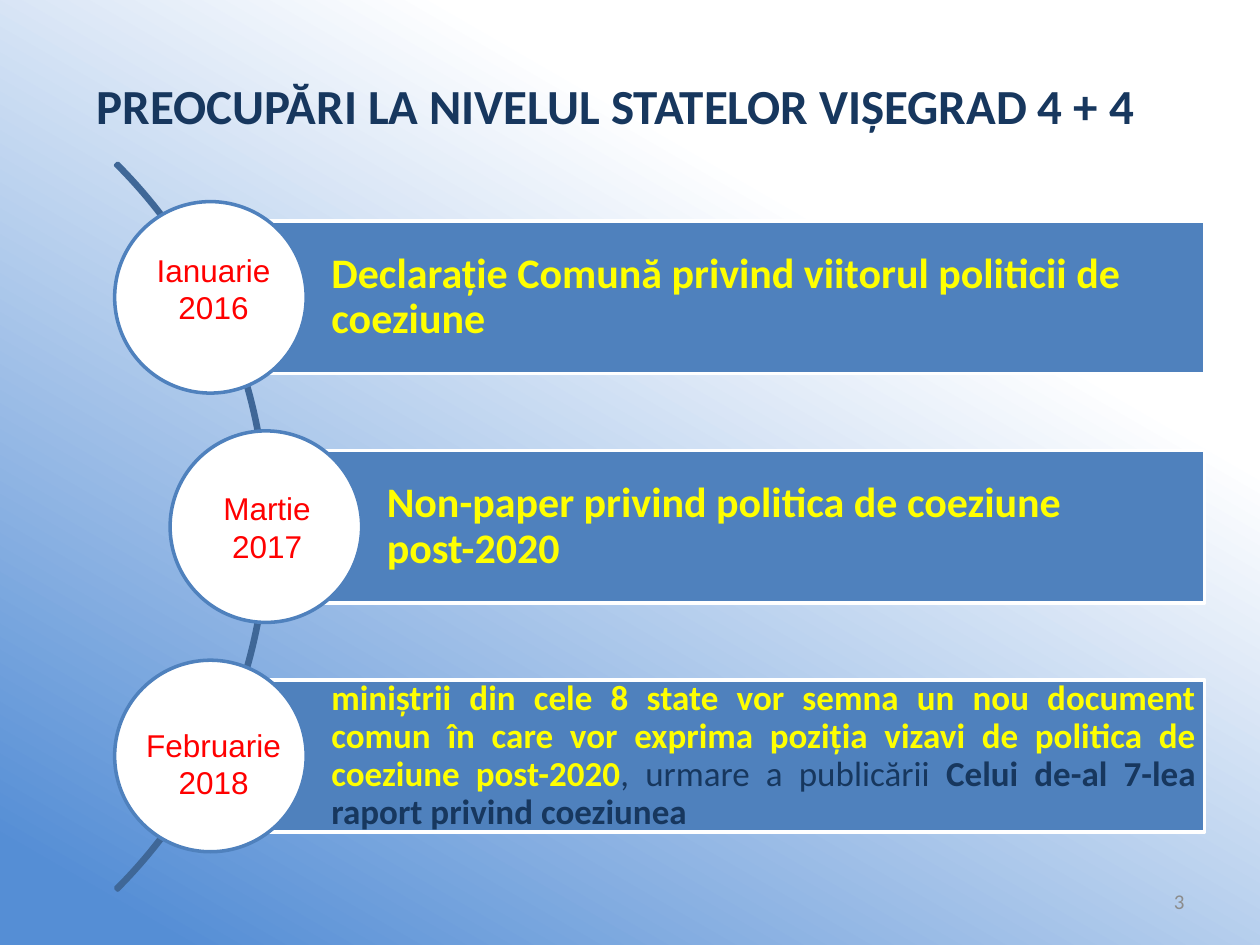
from pptx import Presentation
from pptx.dml.color import RGBColor
from pptx.enum import shapes, text
from pptx.util import Inches, Pt

COLORS = {
    "white": "FFFFFF", "sky": "558ED5", "navy": "17375E", "bar": "4F81BD",
    "arc": "3F6797", "yellow": "FFFF00", "red": "FF0000", "gray": "8C8C8C",
}
CIRCLE = 1.52
BAR_HEIGHT = 1.21
ROW_PITCH = 1.82

# circle indent, date, date box (dx, dy, width), alignment, text size, runs (text, color, bold)
ROWS = [
    (0, "Ianuarie 2016", (0, 0.34, 1.57), text.PP_ALIGN.LEFT, 24,
     [("Declarație Comună privind viitorul politicii de coeziune", "yellow", True)]),
    (0.44, "Martie 2017", (0.3, 0.41, 0.94), text.PP_ALIGN.LEFT, 24,
     [("Non-paper privind politica de coeziune post-2020", "yellow", True)]),
    (0, "Februarie 2018", (-0.12, 0.47, 1.81), text.PP_ALIGN.JUSTIFY, 20,
     [("miniștrii din cele 8 state vor semna un nou document comun în care vor "
       "exprima poziția vizavi de politica de coeziune post-2020", "yellow", True),
      (", urmare a publicării ", "navy", False),
      ("Celui de-al 7-lea raport privind coeziunea", "navy", True)]),
]


def rgb(name):
    return RGBColor.from_string(COLORS[name])


def add_runs(paragraph, runs, size, font="Calibri"):
    for wording, color, bold in runs:
        run = paragraph.add_run()
        run.text = wording
        run.font.name = font
        run.font.size = Pt(size)
        run.font.bold = bold
        run.font.color.rgb = rgb(color)


def add_label(slide, box, runs, size, align, font="Calibri",
              anchor=text.MSO_ANCHOR.MIDDLE):
    frame = slide.shapes.add_textbox(*map(Inches, box)).text_frame
    frame.word_wrap = True
    frame.vertical_anchor = anchor
    frame.paragraphs[0].alignment = align
    add_runs(frame.paragraphs[0], runs, size, font)


def add_outlined(slide, kind, box, fill, line):
    shape = slide.shapes.add_shape(kind, *map(Inches, box))
    shape.shadow.inherit = False
    if fill:
        shape.fill.solid()
        shape.fill.fore_color.rgb = rgb(fill)
    else:
        shape.fill.background()
    shape.line.color.rgb = rgb(line)
    shape.line.width = Pt(2)
    return shape


def paint_background(slide):
    fill = slide.background.fill
    fill.gradient()
    fill.gradient_angle = 240
    for stop, position, color in zip(fill.gradient_stops, (0.28, 0.94), ("white", "sky")):
        stop.position = position
        stop.color.rgb = rgb(color)


def add_arc(slide, box):
    arc = add_outlined(slide, shapes.MSO_SHAPE.BLOCK_ARC, box, None, "arc")
    for index, value in enumerate((189, 27, 0.003)):
        arc.adjustments[index] = value


def add_bar(slide, box, align, size, runs):
    bar = add_outlined(slide, shapes.MSO_SHAPE.RECTANGLE, box, "bar", "white")
    frame = bar.text_frame
    frame.word_wrap = True
    frame.vertical_anchor = text.MSO_ANCHOR.MIDDLE
    frame.margin_left = Inches(0.96)
    frame.margin_top = frame.margin_right = frame.margin_bottom = Inches(0.07)
    paragraph = frame.paragraphs[0]
    paragraph.alignment = align
    paragraph.line_spacing = 0.9
    add_runs(paragraph, runs, size)


def add_timeline(slide, left, top, width):
    """Stack the dated rows; each bar starts at its circle's centre."""
    for index, (indent, date, (dx, dy, date_width), align, size, runs) in enumerate(ROWS):
        x, y = left + indent, top + index * ROW_PITCH
        bar_left = x + CIRCLE / 2
        add_bar(slide, (bar_left, y + (CIRCLE - BAR_HEIGHT) / 2,
                        left + width - bar_left, BAR_HEIGHT), align, size, runs)
        add_outlined(slide, shapes.MSO_SHAPE.OVAL, (x, y, CIRCLE, CIRCLE), "white", "bar")
        add_label(slide, (x + dx, y + dy, date_width, 0.71), [(date, "red", False)], 18,
                  text.PP_ALIGN.CENTER, "Arial", text.MSO_ANCHOR.TOP)


def main():
    presentation = Presentation()
    presentation.slide_width, presentation.slide_height = Inches(10), Inches(7.5)
    slide = presentation.slides.add_slide(presentation.slide_layouts[6])
    paint_background(slide)
    add_label(slide, (0.2, 0.21, 9.37, 1.25),
              [("PREOCUPĂRI LA NIVELUL STATELOR VIȘEGRAD 4 + 4", "navy", True)],
              28, text.PP_ALIGN.CENTER)
    add_arc(slide, (-6.03, 0.1, 8.16, 8.16))
    add_timeline(slide, 0.91, 1.6, 8.65)
    add_label(slide, (7.17, 6.95, 2.33, 0.4), [("3", "gray", False)],
              12, text.PP_ALIGN.RIGHT)
    presentation.save("out.pptx")


if __name__ == "__main__":
    main()
